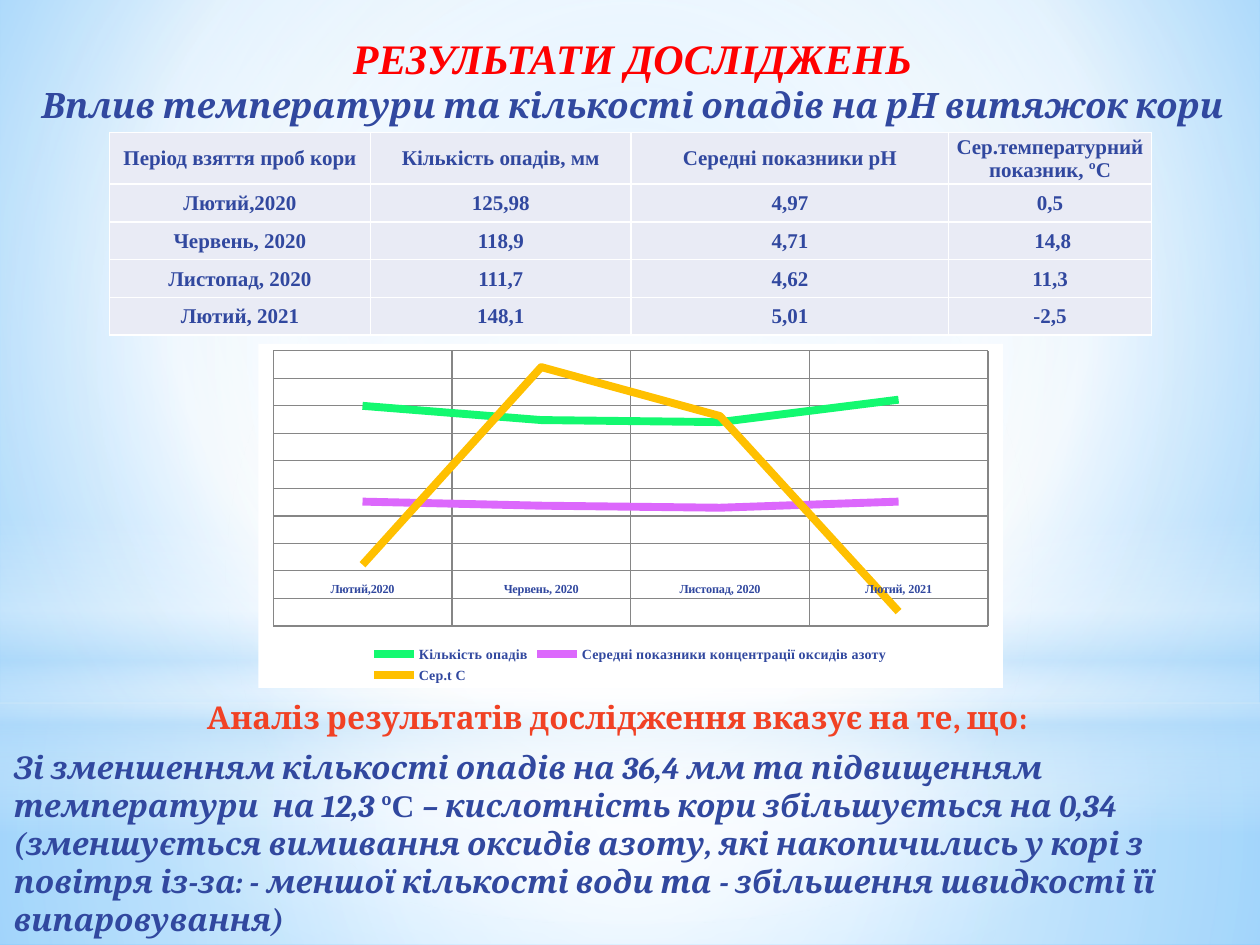
import pptx
import pptx.chart.data
import pptx.enum.chart
import pptx.enum.shapes
import pptx.enum.text
import pptx.oxml
import pptx.oxml.ns
import pptx.util
from pptx.dml.color import RGBColor
from pptx.util import Inches, Pt

COLORS = {
    "white": "FFFFFF", "sky": "9ED5FF", "deep_sky": "5BB9FF", "haze": "B4DCFA",
    "red": "FF0000", "orange": "F14124", "navy": "31489F", "cell": "E9EBF5", "grid": "868686",
    "rain": "13F970", "acidity": "DC68FC", "temperature": "FFC000",
}
SERIF, TIMES = "Cambria", "Times New Roman"
CENTER = pptx.enum.text.PP_ALIGN.CENTER
qn = pptx.oxml.ns.qn
PERIODS = ["Лютий,2020", "Червень, 2020", "Листопад, 2020", "Лютий, 2021"]


def rgb(name):
    return RGBColor.from_string(COLORS[name])


def set_font(font, size, color, name, italic=None):
    font.size, font.name, font.bold, font.italic = Pt(size), name, True, italic
    font.color.rgb = rgb(color)


def set_gradient(owner, stops, focus=None):
    """Fill with (position, colour, opacity) stops: circular round focus, or top to bottom."""
    owner_fill = owner.find(".//" + qn("a:gradFill"))
    stop_xml = "".join(
        f'<a:gs pos="{pos * 1000}"><a:srgbClr val="{COLORS[color]}">'
        f'<a:alpha val="{opacity * 1000}"/></a:srgbClr></a:gs>'
        for pos, color, opacity in stops)
    if focus:
        sides = " ".join(f'{side}="{value * 1000}"' for side, value in zip("ltrb", focus))
        direction = f'<a:path path="circle"><a:fillToRect {sides}/></a:path>'
    else:
        direction = '<a:lin ang="5400000" scaled="0"/>'
    gradient = pptx.oxml.parse_xml(
        f'<a:gradFill {pptx.oxml.ns.nsdecls("a")} rotWithShape="1">'
        f'<a:gsLst>{stop_xml}</a:gsLst>{direction}</a:gradFill>')
    owner_fill.getparent().replace(owner_fill, gradient)


def add_backdrop(slide):
    slide.background.fill.gradient()
    set_gradient(slide._element, [(0, "sky", 100), (60, "white", 100), (100, "deep_sky", 100)],
                 (20, 10, 20, 60))
    shapes = pptx.enum.shapes.MSO_SHAPE
    middle = (50, 50, 50, 50)
    layers = [
        (shapes.RECTANGLE, 5.58, 1.92,
         [(0, "white", 91), (37, "white", 76), (100, "haze", 79)], middle),
        (shapes.RECTANGLE, 0, 5.58,
         [(0, "white", 89), (48, "white", 62), (100, "haze", 79)], middle),
        (shapes.RECTANGLE, 4.12, 2.5,
         [(0, "white", 0), (29, "white", 30), (45, "haze", 40), (55, "white", 26),
          (65, "haze", 60), (100, "white", 0)], None),
        (shapes.OVAL, 1.75, 5.58, [(0, "white", 100), (56, "white", 0)], middle),
    ]
    for kind, top, height, stops, focus in layers:
        layer = slide.shapes.add_shape(kind, 0, Inches(top), Inches(10), Inches(height))
        layer.shadow.inherit = False
        layer.line.fill.background()
        layer.fill.gradient()
        set_gradient(layer._element.spPr, stops, focus)


def add_text(slide, box, lines):
    """Write one paragraph for each (runs, size, colour, font, italic, alignment)."""
    frame = slide.shapes.add_textbox(*map(Inches, box)).text_frame
    frame.word_wrap = True
    for index, (runs, size, color, font, italic, alignment) in enumerate(lines):
        paragraph = frame.add_paragraph() if index else frame.paragraphs[0]
        paragraph.alignment = alignment
        for text in runs:
            paragraph.add_run().text = text
        set_font(paragraph.font, size, color, font, italic)
    return frame


def add_heading(slide, box):
    add_text(slide, box, [
        (["РЕЗУЛЬТАТИ ДОСЛІДЖЕНЬ"], 24, "red", TIMES, True, CENTER),
        (["Вплив температури та кількості опадів на рН витяжок кори"],
         20, "navy", SERIF, True, CENTER),
    ])


def add_conclusion(slide, box):
    runs = [
        "Зі зменшенням кількості опадів на 36,4 мм та підвищенням температури  на 12,3 ",
        "ºС ",
        "– кислотність кори збільшується на 0,34 (зменшується вимивання оксидів азоту, "
        "які накопичились у корі з повітря із-за: - меншої кількості води та "
        "- збільшення швидкості її випаровування)",
    ]
    frame = add_text(slide, box, [(runs, 18, "navy", SERIF, True, None)])
    degrees = frame.paragraphs[0].runs[1].font
    degrees.name, degrees.italic = TIMES, False


def set_borders(cell):
    properties = cell._tc.get_or_add_tcPr()
    for index, side in enumerate(("lnL", "lnR", "lnT", "lnB")):
        properties.insert(index, pptx.oxml.parse_xml(
            f'<a:{side} {pptx.oxml.ns.nsdecls("a")} w="12700"><a:solidFill>'
            f'<a:srgbClr val="{COLORS["white"]}"/></a:solidFill></a:{side}>'))


def add_measurements(slide, box):
    columns = [
        ("Період взяття проб кори", 2.07, PERIODS),
        ("Кількість опадів, мм", 2.07, ["125,98", "118,9", "111,7", "148,1"]),
        ("Середні показники рН", 2.52, ["4,97", "4,71", "4,62", "5,01"]),
        ("Сер.температурний показник, ºС", 1.61, ["0,5", " 14,8", "11,3", "-2,5"]),
    ]
    table = slide.shapes.add_table(5, 4, *map(Inches, box)).table
    for index, row in enumerate(table.rows):
        row.height = Inches(0.3 if index else 0.4)
    for col, (title, width, values) in enumerate(columns):
        table.columns[col].width = Inches(width)
        for row, text in enumerate([title, *values]):
            cell = table.cell(row, col)
            cell.text = text
            cell.vertical_anchor = pptx.enum.text.MSO_ANCHOR.MIDDLE
            cell.margin_left = cell.margin_right = cell.margin_top = Inches(0.01)
            cell.margin_bottom = 0
            cell.fill.solid()
            cell.fill.fore_color.rgb = rgb("cell")
            set_borders(cell)
            paragraph = cell.text_frame.paragraphs[0]
            paragraph.alignment = CENTER
            set_font(paragraph.font, 12, "navy", TIMES)


def chart_layout(x, y, width, height, target=""):
    return pptx.oxml.parse_xml(
        f'<c:layout {pptx.oxml.ns.nsdecls("c")}><c:manualLayout>{target}'
        f'<c:xMode val="edge"/><c:yMode val="edge"/><c:x val="{x}"/><c:y val="{y}"/>'
        f'<c:w val="{width}"/><c:h val="{height}"/></c:manualLayout></c:layout>')


def add_trends(slide, box):
    trends = [
        ("Кількість опадів", "rain", [81, 74, 73, 84]),
        ("Середні показники концентрації оксидів азоту", "acidity", [34, 32, 31, 34]),
        ("Сер.t C", "temperature", [3, 100, 76, -20]),
    ]
    data = pptx.chart.data.CategoryChartData()
    data.categories = PERIODS
    for name, _, values in trends:
        data.add_series(name, values)
    chart = slide.shapes.add_chart(
        pptx.enum.chart.XL_CHART_TYPE.LINE, *map(Inches, box), data).chart
    chart.has_title = False
    chart.font.size, chart.font.name = Pt(10), "Cabin"
    chart.plots[0].vary_by_categories = False
    for series, (_, color, _) in zip(chart.plots[0].series, trends):
        series.smooth = False
        series.format.line.color.rgb = rgb(color)
        series.format.line.width = Pt(4.5)
        series.marker.style = pptx.enum.chart.XL_MARKER_STYLE.NONE

    periods, scale = chart.category_axis, chart.value_axis
    scale.minimum_scale, scale.maximum_scale, scale.major_unit = -27, 108, 13.5
    scale.visible = False
    for axis in (periods, scale):
        axis.has_major_gridlines = True
        axis.major_gridlines.format.line.color.rgb = rgb("grid")
    periods.format.line.color.rgb = rgb("grid")
    set_font(periods.tick_labels.font, 7, "navy", TIMES)

    chart.has_legend = True
    chart.legend.position = pptx.enum.chart.XL_LEGEND_POSITION.BOTTOM
    chart.legend.include_in_layout = False
    set_font(chart.legend.font, 8, "navy", TIMES)

    space = chart._chartSpace
    plot_area = space.find(".//" + qn("c:plotArea"))
    for old_layout in plot_area.findall(qn("c:layout")):
        plot_area.remove(old_layout)
    plot_area.insert(0, chart_layout(0.02, 0.02, 0.96, 0.8, '<c:layoutTarget val="inner"/>'))
    space.find(".//" + qn("c:legendPos")).addnext(chart_layout(0.15, 0.87, 0.7, 0.12))
    space.find(qn("c:chart")).addnext(pptx.oxml.parse_xml(
        f'<c:spPr {pptx.oxml.ns.nsdecls("c", "a")}><a:solidFill>'
        f'<a:srgbClr val="{COLORS["white"]}"/></a:solidFill><a:ln><a:noFill/></a:ln></c:spPr>'))


def main():
    deck = pptx.Presentation()
    deck.slide_width, deck.slide_height = Inches(10), Inches(7.5)
    slide = deck.slides.add_slide(deck.slide_layouts[6])
    add_backdrop(slide)
    add_heading(slide, (0.02, 0.21, 10, 0.84))
    add_conclusion(slide, (0.01, 5.89, 10, 1.62))
    add_measurements(slide, (0.87, 1.05, 8.27, 1.6))
    add_trends(slide, (2.05, 2.73, 5.91, 2.73))
    add_text(slide, (0, 5.49, 9.8, 0.4), [
        (["Аналіз результатів дослідження вказує на те, що:"], 18, "orange", SERIF, None, CENTER)])
    deck.save("out.pptx")


if __name__ == "__main__":
    main()
